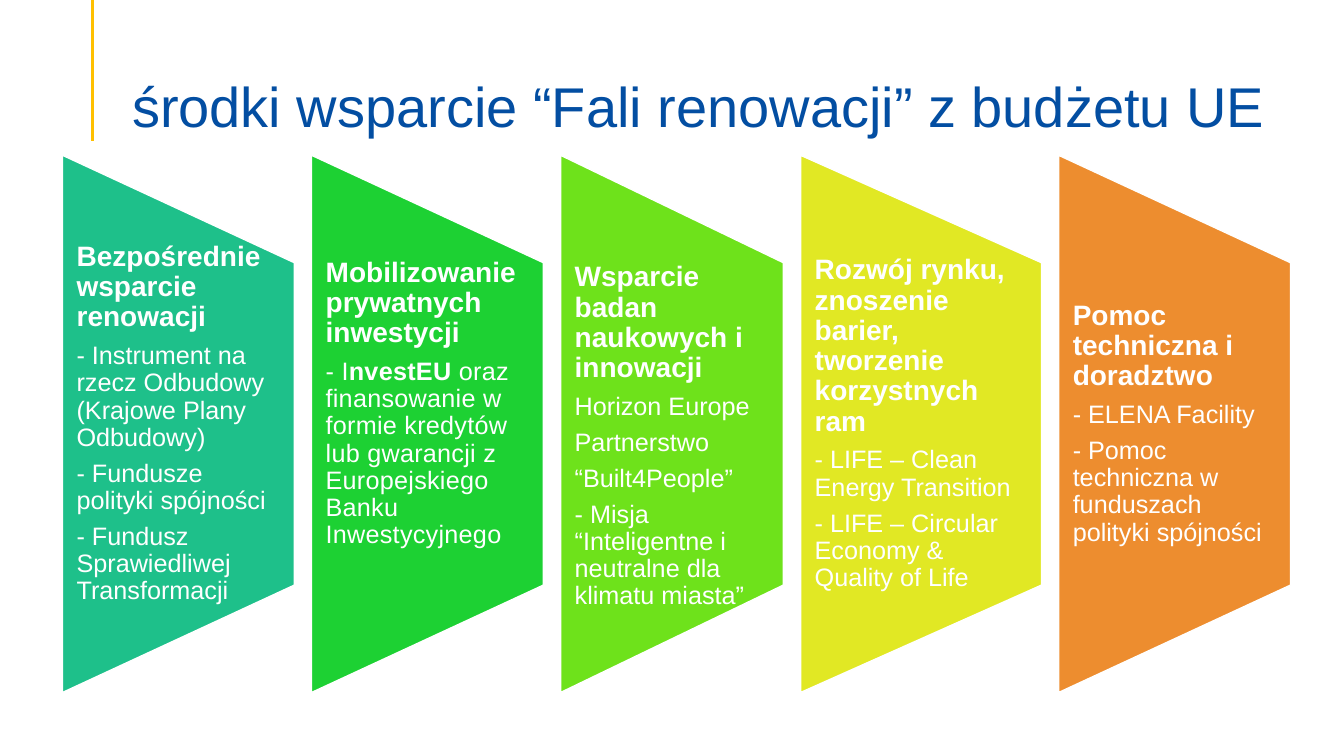
from lxml.etree import SubElement
from pptx import Presentation
from pptx.dml.color import RGBColor
from pptx.enum.shapes import MSO_CONNECTOR, MSO_SHAPE
from pptx.enum.text import MSO_ANCHOR, PP_ALIGN
from pptx.oxml.ns import qn
from pptx.util import Inches, Pt

COLORS = {
    "title": "034EA2", "accent": "FFC000", "white": "FFFFFF",
    "direct": "1EC08A", "invest": "1DD133", "research": "6EE21B",
    "market": "E1E824", "technical": "ED8D2F",
}
FONT = "Arial"
LINE_SPACING = 0.9

# Each measure: colour, width, anchor, bottom inset, letter spacing, heading, items.
# An item is a list of (text, bold) runs.
MEASURES = [
    ("direct", 2.3, MSO_ANCHOR.MIDDLE, 0, 0, "Bezpośrednie wsparcie renowacji", [
        [("- Instrument na rzecz Odbudowy (Krajowe Plany Odbudowy)", False)],
        [("- Fundusze polityki spójności", False)],
        [("- Fundusz Sprawiedliwej Transformacji", False)]]),
    ("invest", 2.3, MSO_ANCHOR.MIDDLE, 0.4, 0.2, "Mobilizowanie prywatnych inwestycji", [
        [("- I", False), ("nvestEU", True),
         (" oraz finansowanie w formie kredytów lub gwarancji z "
          "Europejskiego Banku Inwestycyjnego", False)]]),
    ("research", 2.21, MSO_ANCHOR.TOP, 0, 0, "Wsparcie badan naukowych i innowacji", [
        [("Horizon Europe", False)],
        [("Partnerstwo", False)],
        [("“Built4People”", False)],
        [("- Misja “Inteligentne i neutralne dla klimatu miasta”", False)]]),
    ("market", 2.39, MSO_ANCHOR.MIDDLE, 0, 0,
     "Rozwój rynku, znoszenie barier, tworzenie korzystnych ram", [
         [("- LIFE – Clean Energy Transition", False)],
         [("- LIFE – Circular Economy & Quality of Life", False)]]),
    ("technical", 2.3, MSO_ANCHOR.MIDDLE, 0, 0, "Pomoc techniczna i doradztwo", [
        [("- ELENA Facility", False)],
        [("- Pomoc techniczna w funduszach polityki spójności", False)]]),
]


def color(name):
    return RGBColor.from_string(COLORS[name])


def apply(target, values):
    for attribute, value in values.items():
        setattr(target, attribute, value)


def set_font(font, size, color_name, bold):
    apply(font, {"name": FONT, "size": Pt(size), "bold": bold})
    font.color.rgb = color(color_name)


def add_title(slide, left, top, width, height):
    # Accent line running down from the top edge
    accent = slide.shapes.add_connector(
        MSO_CONNECTOR.STRAIGHT, Inches(left - 0.14), 0, Inches(left - 0.14), Inches(1.4))
    accent.line.color.rgb = color("accent")
    accent.line.width = Pt(2.25)
    SubElement(accent._element.spPr, qn("a:effectLst"))

    title = slide.shapes.title
    apply(title, {"left": Inches(left), "top": Inches(top),
                  "width": Inches(width), "height": Inches(height)})
    apply(title.text_frame, {
        "text": "środki wsparcie “Fali renowacji” z budżetu UE",
        "word_wrap": True, "vertical_anchor": MSO_ANCHOR.BOTTOM,
        "margin_left": Inches(0.25), "margin_right": Inches(0.1),
        "margin_top": Inches(0.05), "margin_bottom": 0})
    heading = title.text_frame.paragraphs[0]
    apply(heading, {"alignment": PP_ALIGN.LEFT, "line_spacing": LINE_SPACING})
    set_font(heading.runs[0].font, 40, "title", False)


def add_paragraph(paragraph, runs, size, tracking):
    apply(paragraph, {"alignment": PP_ALIGN.LEFT, "line_spacing": LINE_SPACING,
                      "space_after": Pt(size * 0.35)})
    for text, bold in runs:
        run = paragraph.add_run()
        run.text = text
        set_font(run.font, size, "white", bold)
        if tracking:
            run.font._element.set("spc", str(int(tracking * 100)))


def add_measure(slide, left, top, width, height, measure):
    fill, _, anchor, bottom_inset, tracking, heading, items = measure

    # Panel: a trapezoid turned a quarter left, so its sides swap around the centre
    turn = (height - width) / 2
    panel = slide.shapes.add_shape(
        MSO_SHAPE.FLOWCHART_MANUAL_OPERATION, Inches(left - turn), Inches(top + turn),
        Inches(height), Inches(width))
    panel.rotation = 270
    panel.shadow.inherit = False
    panel.fill.solid()
    panel.fill.fore_color.rgb = color(fill)
    panel.line.color.rgb = color("white")
    panel.line.width = Pt(1)

    # Text in the middle three fifths of the panel
    body = slide.shapes.add_textbox(
        Inches(left), Inches(top + height / 5), Inches(width), Inches(height * 3 / 5))
    frame = body.text_frame
    apply(frame, {"word_wrap": True, "vertical_anchor": anchor,
                  "margin_left": Inches(0.14), "margin_right": Inches(0.14),
                  "margin_top": 0, "margin_bottom": Inches(bottom_inset)})
    add_paragraph(frame.paragraphs[0], [(heading, True)], 20, 0)
    for runs in items:
        add_paragraph(frame.add_paragraph(), runs, 18, tracking)


def add_measures(slide, left, top, height, gap):
    for measure in MEASURES:
        width = measure[1]
        add_measure(slide, left, top, width, height, measure)
        left += width + gap


def main():
    presentation = Presentation()
    apply(presentation, {"slide_width": Inches(13.33), "slide_height": Inches(7.5)})
    slide = presentation.slides.add_slide(presentation.slide_layouts[5])
    add_title(slide, 1.06, 0.53, 11.73, 0.86)
    add_measures(slide, 0.62, 1.54, 5.33, 0.17)
    presentation.save("out.pptx")


if __name__ == "__main__":
    main()
